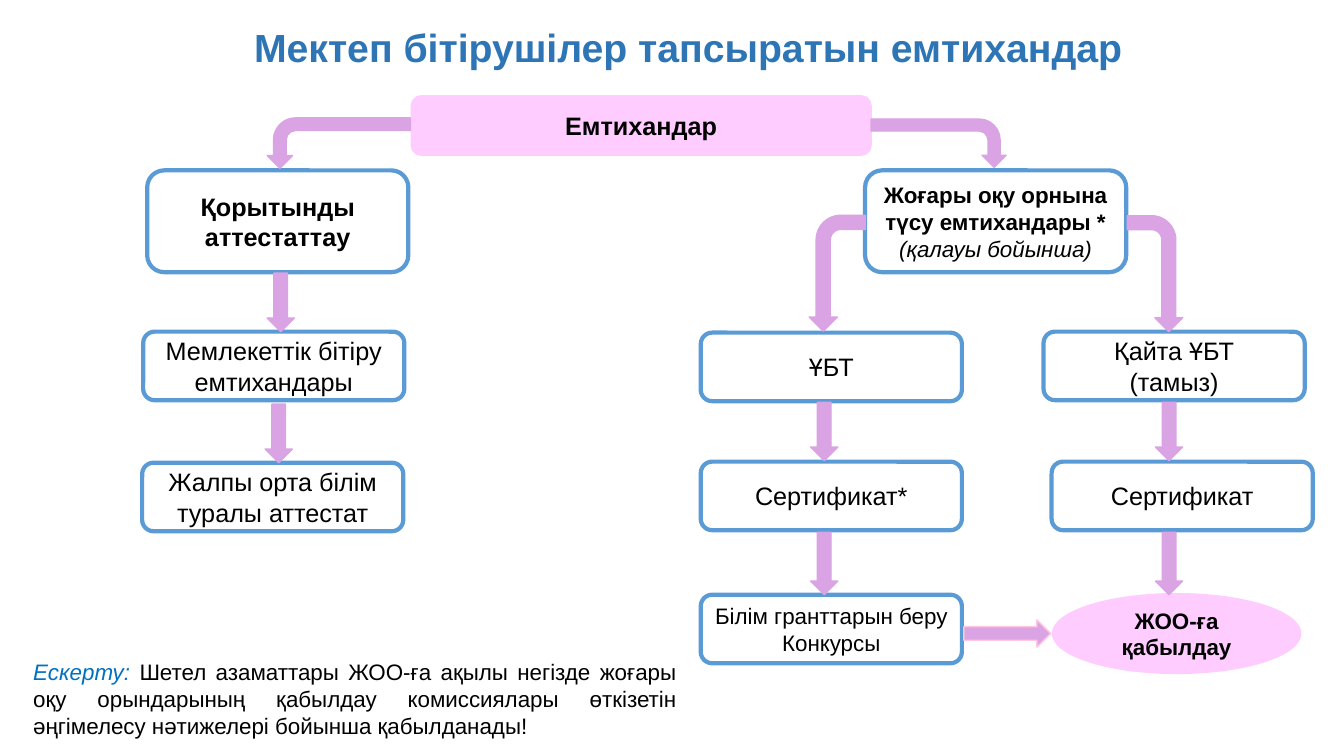
from dataclasses import dataclass

from pptx import Presentation
from pptx.dml.color import RGBColor
from pptx.enum.shapes import MSO_SHAPE as Shape
from pptx.enum.text import MSO_ANCHOR as Anchor, MSO_AUTO_SIZE as AutoSize, PP_ALIGN as Align
from pptx.util import Emu, Pt

PX = 9144  # one px is a hundredth of an inch


@dataclass(frozen=True)
class Theme:
    font: str = "Arial"
    title: str = "2E75B6"
    note: str = "0070C0"
    ink: str = "000000"
    paper: str = "FFFFFF"
    border: str = "5B9BD5"
    accent: str = "FFCCFF"
    arrow: str = "DAA3E4"
    arrow_edge: str = "FEC6DF"
    title_size: int = 28
    text_size: int = 18
    small_size: int = 16


def px(*lengths):
    return [Emu(length * PX) for length in lengths]


def add_text(para, text, *, font, size, color, bold=False, italic=False, align=Align.CENTER):
    para.alignment = align
    span = para.add_run()
    span.text = text
    span.font.name = font
    span.font.size = Pt(size)
    span.font.bold = bold
    span.font.italic = italic
    span.font.color.rgb = RGBColor.from_string(color)


class SlideBuilder:
    def __init__(self, page, theme):
        self.page = page
        self.theme = theme

    def styled(self, para, text, **style):
        defaults = dict(font=self.theme.font, size=self.theme.text_size, color=self.theme.ink)
        add_text(para, text, **(defaults | style))

    def shape(self, kind, place, fill, line, weight=1):
        shape = self.page.shapes.add_shape(kind, *px(*place))
        shape.shadow.inherit = False
        shape.fill.solid()
        shape.fill.fore_color.rgb = RGBColor.from_string(fill)
        shape.line.color.rgb = RGBColor.from_string(line)
        shape.line.width = Pt(weight)
        return shape

    def title(self, text, place):
        title = self.page.shapes.title
        title.left, title.top, title.width, title.height = px(*place)
        frame = title.text_frame
        frame.auto_size = AutoSize.NONE
        frame.vertical_anchor = Anchor.TOP
        self.styled(frame.paragraphs[0], text, size=self.theme.title_size,
                    color=self.theme.title, bold=True)

    def note(self, label, text, place):
        frame = self.page.shapes.add_textbox(*px(*place)).text_frame
        frame.word_wrap = True
        para = frame.paragraphs[0]
        style = dict(size=self.theme.small_size, align=Align.JUSTIFY)
        self.styled(para, label, color=self.theme.note, italic=True, **style)
        self.styled(para, text, **style)

    def box(self, place, *lines, kind=Shape.ROUNDED_RECTANGLE, accent=False, **style):
        """Each line is a text, or a text with its own format."""
        theme = self.theme
        colors = (theme.accent, theme.accent, 1) if accent else (theme.paper, theme.border, 3)
        frame = self.shape(kind, place, *colors).text_frame
        frame.word_wrap = True
        frame.vertical_anchor = Anchor.MIDDLE
        for index, line in enumerate(lines):
            text, extra = (line, {}) if isinstance(line, str) else line
            para = frame.add_paragraph() if index else frame.paragraphs[0]
            self.styled(para, text, **(style | extra))

    def arrow(self, kind, place, rotation=0, flips=(), line=None):
        arrow = self.shape(kind, place, self.theme.arrow, line or self.theme.arrow)
        arrow.rotation = rotation
        for flip in flips:
            arrow._element.spPr.xfrm.set(flip, "1")


def main():
    theme = Theme()
    deck = Presentation()
    deck.slide_width, deck.slide_height = px(1333, 750)
    slide = SlideBuilder(deck.slides.add_slide(deck.slide_layouts[5]), theme)
    small = theme.small_size

    # Title and note
    slide.title("Мектеп бітірушілер тапсыратын емтихандар", (63, 18, 1239, 57))
    slide.note("Ескерту: ",
               "Шетел азаматтары ЖОО-ға ақылы негізде жоғары оқу орындарының қабылдау "
               "комиссиялары өткізетін әңгімелесу нәтижелері бойынша қабылданады!",
               (23, 648, 658, 91))

    # Step boxes share one size
    steps = [
        (142, 329, ["Мемлекеттік бітіру емтихандары"], theme.text_size),
        (141, 459, ["Жалпы орта білім туралы аттестат"], theme.text_size),
        (695, 330, ["ҰБТ"], theme.text_size),
        (695, 458, ["Сертификат*"], theme.text_size),
        (695, 590, ["Білім гранттарын беру Конкурсы"], small),
        (1035, 329, ["Қайта ҰБТ", "(тамыз)"], theme.text_size),
        (1043, 458, ["Сертификат"], theme.text_size),
    ]
    for left, top, lines, size in steps:
        slide.box((left, top, 259, 68), *lines, size=size)

    # Root, its two branches and the goal
    slide.box((408, 95, 456, 59), "Емтихандар", accent=True, bold=True)
    slide.box((146, 169, 259, 101), "Қорытынды аттестаттау", bold=True)
    slide.box((858, 169, 259, 101), "Жоғары оқу орнына түсу емтихандары *",
              ("(қалауы бойынша)", dict(bold=False, italic=True)), size=small, bold=True)
    slide.box((1044, 589, 246, 79), "ЖОО-ға қабылдау",
              kind=Shape.OVAL, accent=True, size=small, bold=True)

    # Bent arrows
    bends = [
        ((311, 71, 50, 142), 270, ["flipH"]),
        ((907, 75, 48, 134), 270, ["flipH", "flipV"]),
        ((773, 243, 115, 56), 90, ["flipV"]),
        ((1088, 244, 115, 55), 90, []),
    ]
    for place, rotation, flips in bends:
        slide.arrow(Shape.BENT_ARROW, place, rotation, flips)

    # Straight arrows
    drops = [(265, 271, 58), (263, 401, 58)]
    drops += [(left, top, height) for left in (804, 1146) for top, height in ((399, 58), (528, 62))]
    for left, top, height in drops:
        slide.arrow(Shape.DOWN_ARROW, (left, top, 27, height))
    slide.arrow(Shape.RIGHT_ARROW, (956, 615, 86, 27), line=theme.arrow_edge)

    deck.save("out.pptx")


if __name__ == "__main__":
    main()
